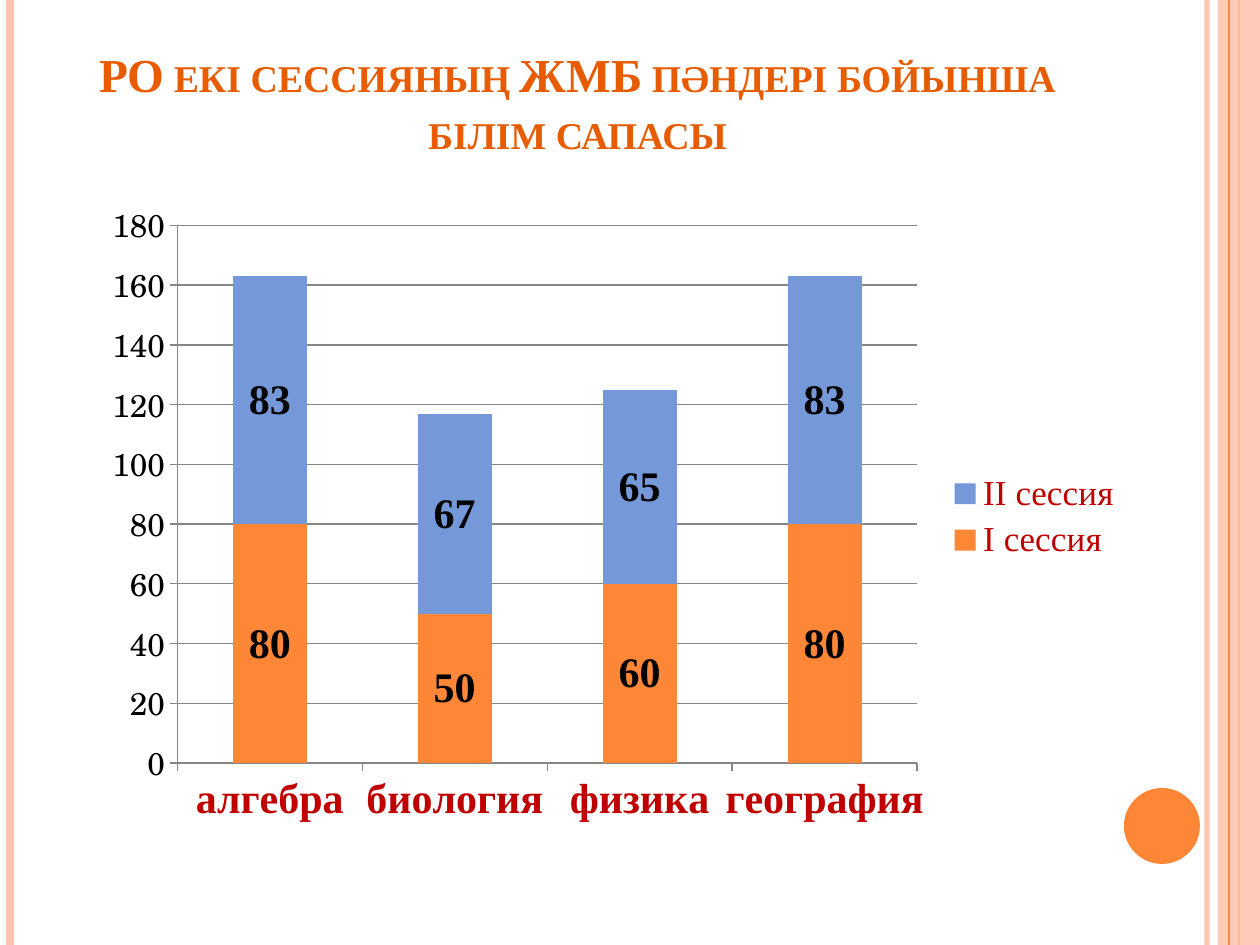
import pptx
import pptx.chart.data
import pptx.dml.color
import pptx.enum.chart
import pptx.enum.shapes
import pptx.enum.text
import pptx.oxml
import pptx.oxml.ns
import pptx.util
from lxml import etree

PX_PER_INCH = 126
COLORS = {
    "orange": "FE8637",
    "peach": "FEC3AE",
    "title": "E75C01",
    "blue": "7598D9",
    "red": "C00000",
    "grid": "868686",
    "black": "000000",
}
SERIF = "Times New Roman"
SCHOLA = "TeX Gyre Schola"


def px(length):
    return pptx.util.Emu(round(length * 914400 / PX_PER_INCH))


def rgb(name):
    return pptx.dml.color.RGBColor.from_string(COLORS[name])


def set_font(font, name, size, color, bold=False):
    font.name = name
    font.size = pptx.util.Pt(size)
    font.bold = bold
    font.color.rgb = rgb(color)


def set_alpha(shape, percent):
    color = next(shape._element.spPr.iter(pptx.oxml.ns.qn("a:srgbClr")))
    etree.SubElement(color, pptx.oxml.ns.qn("a:alpha"), val=str(percent * 1000))


def add_stripe(page, x, height, color, width):
    line = page.shapes.add_connector(
        pptx.enum.shapes.MSO_CONNECTOR.STRAIGHT, px(x), 0, px(x), px(height))
    line.line.color.rgb = rgb(color)
    line.line.width = pptx.util.Pt(width)
    etree.SubElement(line._element.spPr, pptx.oxml.ns.qn("a:effectLst"))
    return line


def add_solid(page, kind, box, color):
    shape = page.shapes.add_shape(kind, *map(px, box))
    shape.shadow.inherit = False
    shape.fill.solid()
    shape.fill.fore_color.rgb = rgb(color)
    shape.line.fill.background()
    return shape


def add_frame(page, box):
    left, top, width, height = box
    right = left + width
    shapes = pptx.enum.shapes.MSO_SHAPE
    # Thin stripes on both edges
    set_alpha(add_stripe(page, right - 53, height, "peach", 3), 93)
    add_stripe(page, left + 10, height, "peach", 4.5)
    add_stripe(page, right - 21, height, "orange", 1.5)
    # Translucent band with its inner line
    band = add_solid(page, shapes.RECTANGLE, (right - 42, top, 42, height), "peach")
    set_alpha(band, 87)
    add_stripe(page, right - 31, height, "orange", 0.75)
    # Corner disc
    add_solid(page, shapes.OVAL, (right - 136, top + height - 157, 76, 76), "orange")


def add_title(page, box, text):
    title = page.shapes.title
    title.left, title.top, title.width, title.height = map(px, box)
    frame = title.text_frame
    frame.word_wrap = True
    frame.auto_size = pptx.enum.text.MSO_AUTO_SIZE.NONE
    frame.vertical_anchor = pptx.enum.text.MSO_ANCHOR.BOTTOM
    para = frame.paragraphs[0]
    para.alignment = pptx.enum.text.PP_ALIGN.CENTER
    span = para.add_run()
    span.text = text
    set_font(span.font, SERIF, 27, "title", bold=True)
    span._r.get_or_add_rPr().set("cap", "small")


def set_plot_layout(chart, x, y, w, h):
    layout = pptx.oxml.parse_xml(
        f'<c:layout {pptx.oxml.ns.nsdecls("c")}><c:manualLayout>'
        '<c:layoutTarget val="inner"/><c:xMode val="edge"/><c:yMode val="edge"/>'
        f'<c:x val="{x}"/><c:y val="{y}"/><c:w val="{w}"/><c:h val="{h}"/>'
        '</c:manualLayout></c:layout>')
    plot_area = chart._chartSpace.chart.plotArea
    for old in plot_area.findall(pptx.oxml.ns.qn("c:layout")):
        plot_area.remove(old)
    plot_area.insert(0, layout)


def add_quality_chart(page, box, subjects, sessions):
    enums = pptx.enum.chart
    data = pptx.chart.data.CategoryChartData()
    data.categories = subjects
    for name, values, _ in sessions:
        data.add_series(name, values)
    chart = page.shapes.add_chart(
        enums.XL_CHART_TYPE.COLUMN_STACKED, *map(px, box), data).chart
    set_font(chart.font, SCHOLA, 18, "black")
    chart.has_title = False
    set_plot_layout(chart, 0.08, 0.05, 0.71, 0.83)

    # Columns and their values
    plot = chart.plots[0]
    plot.gap_width = 150
    plot.overlap = 100
    plot.vary_by_categories = False
    for series, (_, _, color) in zip(plot.series, sessions):
        series.format.fill.solid()
        series.format.fill.fore_color.rgb = rgb(color)
        labels = series.data_labels
        labels.show_value = True
        set_font(labels.font, SERIF, 24, "black", bold=True)

    # Axes
    for axis in (chart.category_axis, chart.value_axis):
        axis.major_tick_mark = enums.XL_TICK_MARK.OUTSIDE
        axis.minor_tick_mark = enums.XL_TICK_MARK.NONE
        axis.format.line.color.rgb = rgb("grid")
    set_font(chart.category_axis.tick_labels.font, SERIF, 24, "red", bold=True)
    scale = chart.value_axis
    scale.minimum_scale, scale.maximum_scale, scale.major_unit = 0, 180, 20
    scale.has_major_gridlines = True
    scale.major_gridlines.format.line.color.rgb = rgb("grid")

    # Legend
    chart.has_legend = True
    chart.legend.position = enums.XL_LEGEND_POSITION.RIGHT
    chart.legend.include_in_layout = False
    set_font(chart.legend.font, SERIF, 20, "red")


def main():
    deck = pptx.Presentation()
    deck.slide_width, deck.slide_height = px(1260), px(945)
    page = deck.slides.add_slide(deck.slide_layouts.get_by_name("Title Only"))
    add_frame(page, (0, 0, 1260, 945))
    add_title(page, (63, 38, 1029, 127),
              "РО екі сессияның ЖМБ пәндері бойынша білім сапасы")
    add_quality_chart(
        page, (94, 193, 1042, 648),
        ["алгебра", "биология", "физика", "география"],
        [("І сессия", (80, 50, 60, 80), "orange"),
         ("ІІ сессия", (83, 67, 65, 83), "blue")])
    deck.save("out.pptx")


if __name__ == "__main__":
    main()
